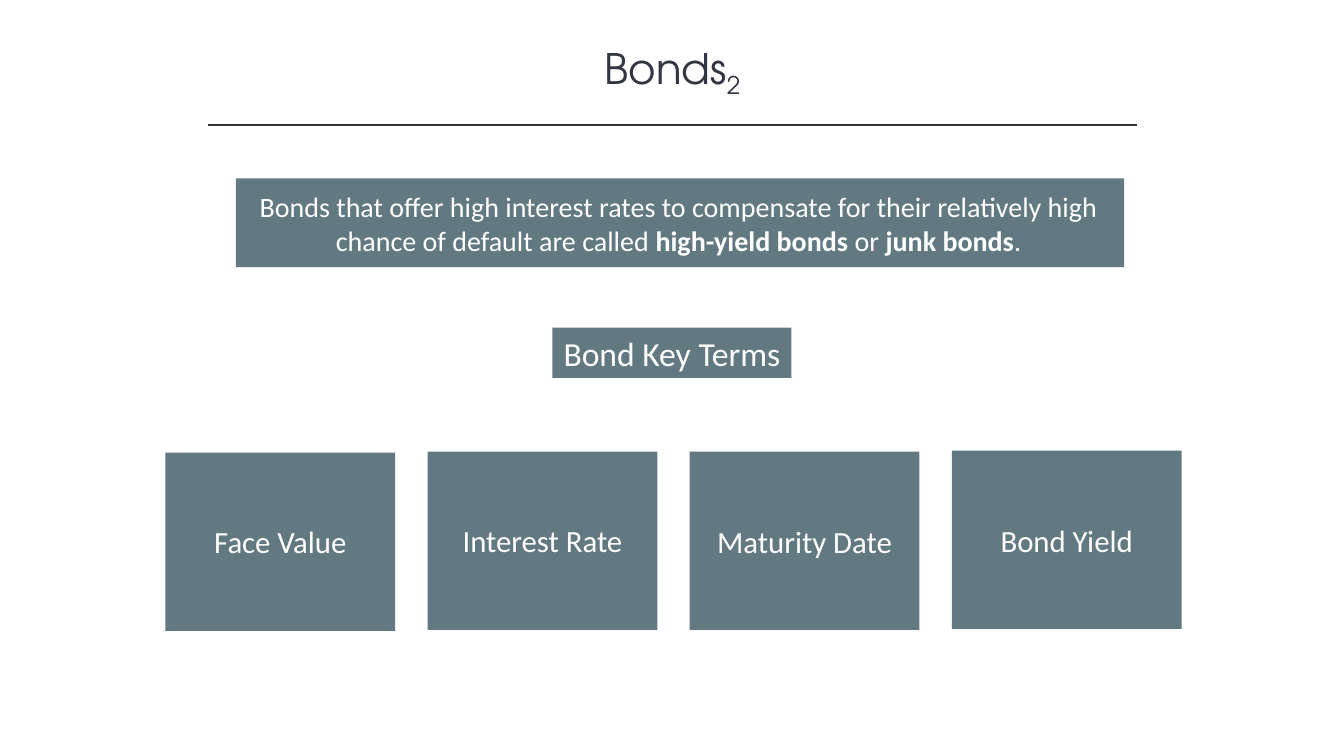
from pptx import Presentation
from pptx.dml.color import RGBColor
from pptx.enum.shapes import MSO_CONNECTOR, MSO_SHAPE
from pptx.enum.text import MSO_ANCHOR, MSO_AUTO_SIZE, PP_ALIGN
from pptx.oxml.ns import qn
from pptx.util import Inches, Pt
from lxml.etree import SubElement

INK, SLATE, WHITE = "323542", "627981", "FFFFFF"
TITLE = [("Bonds", False), ("2", False)]
DEFINITION = [
    ("Bonds that offer high interest rates to compensate for their "
     "relatively high chance of default are called ", False),
    ("high-yield bonds ", True),
    ("or ", False),
    ("junk bonds", True),
    (".", False),
]
HEADING = [("Bond Key Terms", False)]
TERMS = [
    ("Face Value", 4.49, 5.13, 1.82),
    ("Interest Rate", 4.48, 5.12, 1.82),
    ("Maturity Date", 4.48, 5.13, 1.97),
    ("Bond Yield", 4.47, 5.12, 1.82),
]
CARD_LEFT, CARD_PITCH, CARD_W, CARD_H, LABEL_H = 1.64, 2.6, 2.28, 1.77, 0.47


def rgb(value):
    return RGBColor.from_string(value)


def add_rect(shapes, left, top, width, height):
    sp = shapes.add_shape(MSO_SHAPE.RECTANGLE, Inches(left), Inches(top),
                          Inches(width), Inches(height))
    sp.shadow.inherit = False
    sp.fill.solid()
    sp.fill.fore_color.rgb = rgb(SLATE)
    sp.line.fill.background()
    return sp


def write(sp, runs, size, font="Calibri", color=WHITE,
          anchor=MSO_ANCHOR.TOP, wrap=True):
    tf = sp.text_frame
    tf.word_wrap = wrap
    tf.auto_size = MSO_AUTO_SIZE.SHAPE_TO_FIT_TEXT
    tf.vertical_anchor = anchor
    p = tf.paragraphs[0]
    p.alignment = PP_ALIGN.CENTER
    for text, bold in runs:
        r = p.add_run()
        r.text = text
        r.font.size = Pt(size)
        r.font.name = font
        r.font.bold = bold
        r.font.color.rgb = rgb(color)
    return p


prs = Presentation()
prs.slide_width, prs.slide_height = Inches(13.33), Inches(7.5)
s = prs.slides.add_slide(prs.slide_layouts[5])

title = s.shapes.title
title.left, title.top = Inches(1.67), Inches(0.37)
title.width, title.height = Inches(10), Inches(0.61)
p = write(title, TITLE, 30, "TeX Gyre Adventor", INK)
p.runs[1]._r.get_or_add_rPr().set("baseline", "-25000")

rule = s.shapes.add_connector(MSO_CONNECTOR.STRAIGHT, Inches(2.06), Inches(1.24),
                              Inches(11.28), Inches(1.24))
rule.line.color.rgb = rgb(INK)
rule.line.width = Pt(1)
SubElement(rule._element.spPr, qn("a:effectLst"))

banner = s.shapes.add_group_shape().shapes
add_rect(banner, 2.34, 1.77, 8.81, 0.88)
write(add_rect(banner, 2.46, 1.83, 8.54, 0.77), DEFINITION, 20)

write(add_rect(s.shapes, 5.48, 3.25, 2.37, 0.5), HEADING, 24, wrap=False)

for i, (term, top, label_top, label_w) in enumerate(TERMS):
    left = CARD_LEFT + i * CARD_PITCH
    card = s.shapes.add_group_shape().shapes
    add_rect(card, left, top, CARD_W, CARD_H)
    label = add_rect(card, left + (CARD_W - label_w) / 2, label_top, label_w, LABEL_H)
    write(label, [(term, False)], 22, anchor=MSO_ANCHOR.MIDDLE)

prs.save("out.pptx")
